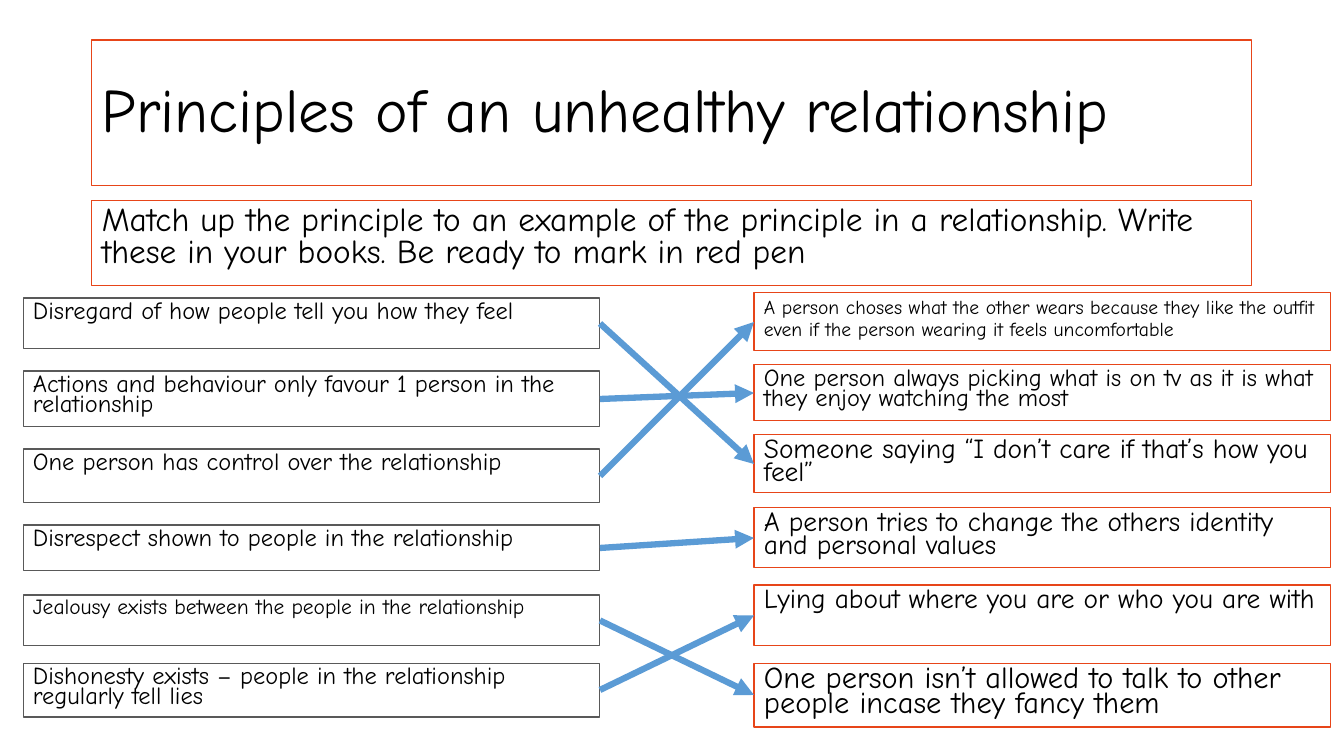
"""Builds a matching exercise on the principles of an unhealthy relationship."""
from lxml import etree
from pptx import Presentation
from pptx import util as u
from pptx.dml.color import RGBColor
from pptx.enum import shapes, text
from pptx.oxml.ns import qn

PX = 914400 / 100.8
THEME = {
    "font": "Comic Neue", "ink": "000000", "red": "E74519", "grey": "595959",
    "arrow": "5B9BD5", "title": 44, "task": 23.8, "huge": 21.7, "large": 19.6,
    "medium": 17.5, "small": 15.4, "tiny": 14, "outline": 0.75, "stroke": 4.5,
}


def px(length):
    return u.Emu(round(length * PX))


def add_box(page, place, wording, size, spacing, line="red", before=10):
    box = page.shapes.add_shape(shapes.MSO_SHAPE.RECTANGLE, *map(px, place))
    box.shadow.inherit = False
    box.fill.background()
    box.line.color.rgb = RGBColor.from_string(THEME[line])
    box.line.width = u.Pt(THEME["outline"])
    frame = box.text_frame
    frame.word_wrap = True
    frame.vertical_anchor = text.MSO_ANCHOR.TOP
    para = frame.paragraphs[0]
    para.alignment = text.PP_ALIGN.LEFT
    para.line_spacing = spacing
    para.space_before = u.Pt(before)
    span = para.add_run()
    span.text = wording
    span.font.name = THEME["font"]
    span.font.size = u.Pt(THEME[size])
    span.font.color.rgb = RGBColor.from_string(THEME["ink"])
    return box


deck = Presentation()
deck.slide_width, deck.slide_height = px(1344), px(756)
page = deck.slides.add_slide(deck.slide_layouts[6])

title = add_box(page, (92, 40, 1160, 146), "Principles of an unhealthy relationship",
                "title", 0.9, before=0)
title.text_frame.vertical_anchor = text.MSO_ANCHOR.MIDDLE
add_box(page, (92, 201, 1160, 85),
        "Match up the principle to an example of the principle in a relationship. "
        "Write these in your books. Be ready to mark in red pen", "task", 0.8)

principles = [
    (298, 51, "medium", "Disregard of how people tell you how they feel"),
    (371, 56, "medium", "Actions and behaviour only favour 1 person in the relationship"),
    (449, 54, "medium", "One person has control over the relationship"),
    (525, 46, "medium", "Disrespect shown to people in the relationship"),
    (595, 51, "small", "Jealousy exists between the people in the relationship"),
    (663, 54, "medium", "Dishonesty exists – people in the relationship regularly tell lies"),
]
examples = [
    (293, 58, "tiny", "A person choses what the other wears because they like the outfit "
     "even if the person wearing it feels uncomfortable"),
    (365, 56, "medium", "One person always picking what is on tv as it is what they enjoy "
     "watching the most"),
    (435, 58, "large", "Someone saying “I don’t care if that’s how you feel”"),
    (508, 60, "large", "A person tries to change the others identity and personal values"),
    (585, 61, "large", "Lying about where you are or who you are with"),
    (663, 64, "huge", "One person isn’t allowed to talk to other people incase they fancy them"),
]
columns = []
for left, line, rows in ((23, "grey", principles), (754, "red", examples)):
    columns.append([
        add_box(page, (left, top, 577, height), wording, size,
                0.9 if size == "tiny" else 0.7, line)
        for top, height, size, wording in rows])

matches = [2, 1, 0, 3, 5, 4]
for principle, match in zip(columns[0], matches):
    arrow = page.shapes.add_connector(shapes.MSO_CONNECTOR.STRAIGHT, 0, 0, 0, 0)
    arrow.begin_connect(principle, 3)
    arrow.end_connect(columns[1][match], 1)
    arrow.line.color.rgb = RGBColor.from_string(THEME["arrow"])
    arrow.line.width = u.Pt(THEME["stroke"])
    etree.SubElement(arrow.line._get_or_add_ln(), qn("a:tailEnd"), type="triangle")
    etree.SubElement(arrow._element.spPr, qn("a:effectLst"))

deck.save("out.pptx")
